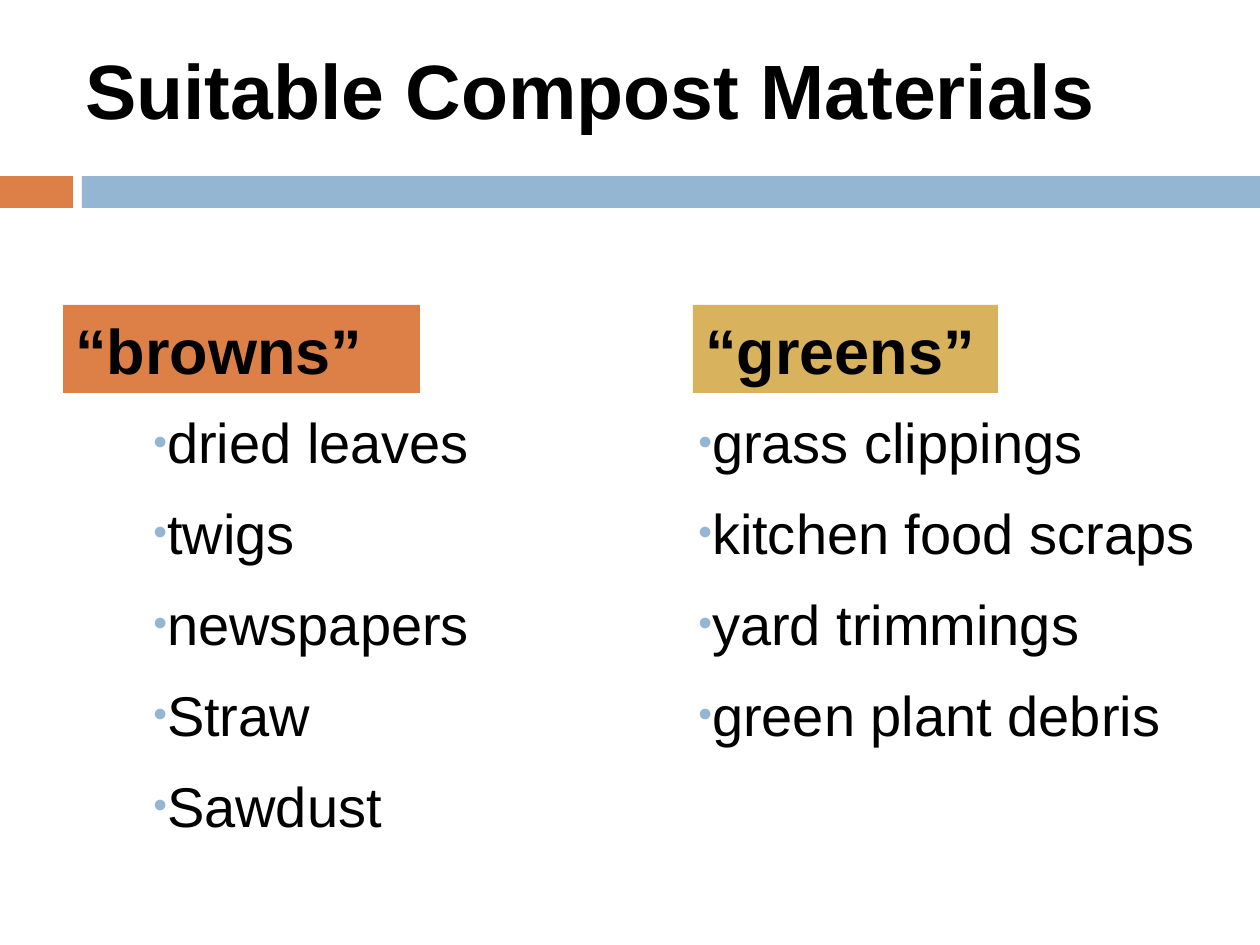
from dataclasses import dataclass

from lxml import etree
from pptx import Presentation
from pptx.dml.color import RGBColor
from pptx.enum.shapes import MSO_SHAPE
from pptx.enum.text import MSO_ANCHOR, PP_ALIGN
from pptx.oxml.ns import qn
from pptx.util import Emu, Pt

RECT = MSO_SHAPE.RECTANGLE
MIDDLE, TOP = MSO_ANCHOR.MIDDLE, MSO_ANCHOR.TOP
LEFT = PP_ALIGN.LEFT

PX = 914400 // 126  # EMU in one px
ORANGE, BLUE, GOLD, BLACK = "DD8047", "94B6D2", "D8B25C", "000000"
LIST_INDENT = 25


@dataclass
class Box:
    x: int
    y: int
    w: int
    h: int

    def emu(self) -> list[Emu]:
        return [Emu(v * PX) for v in (self.x, self.y, self.w, self.h)]


@dataclass
class Column:
    heading: str
    color: str
    heading_box: Box
    items: list[str]
    list_box: Box


COLUMNS = [
    Column("“browns”", ORANGE, Box(63, 305, 357, 88),
           ["dried leaves", "twigs", "newspapers", "Straw", "Sawdust"],
           Box(116, 399, 388, 546)),
    Column("“greens”", GOLD, Box(693, 305, 305, 88),
           ["grass clippings", "kitchen food scraps", "yard trimmings",
            "green plant debris"],
           Box(661, 399, 567, 546)),
]


def rgb(color: str) -> RGBColor:
    return RGBColor.from_string(color)


def add_rect(s, box: Box, color: str):
    sp = s.shapes.add_shape(RECT, *box.emu())
    sp.shadow.inherit = False
    sp.fill.solid()
    sp.fill.fore_color.rgb = rgb(color)
    sp.line.fill.background()
    return sp


def add_bullet(p, color: str) -> None:
    pPr = p._p.get_or_add_pPr()
    pPr.set("marL", str(LIST_INDENT * PX))
    pPr.set("indent", "0")
    bu_color = etree.SubElement(pPr, qn("a:buClr"))
    etree.SubElement(bu_color, qn("a:srgbClr"), val=color)
    etree.SubElement(pPr, qn("a:buSzPct"), val="70000")
    etree.SubElement(pPr, qn("a:buFont"), typeface="Arial")
    etree.SubElement(pPr, qn("a:buChar"), char="•")


def write(sp, lines: list[str], size: int, bold: bool = False,
          anchor=MIDDLE, before: int = 0, spacing: float = 1.0,
          bullet: str = "") -> None:
    tf = sp.text_frame
    tf.word_wrap = True
    tf.vertical_anchor = anchor
    for i, line in enumerate(lines):
        p = tf.add_paragraph() if i else tf.paragraphs[0]
        p.alignment = LEFT
        p.space_before = Pt(before)
        p.line_spacing = spacing
        if bullet:
            add_bullet(p, bullet)
        r = p.add_run()
        r.text = line
        r.font.name = "Arial"
        r.font.size = Pt(size)
        r.font.bold = bold
        r.font.color.rgb = rgb(BLACK)


def add_column(s, col: Column) -> None:
    items = s.shapes.add_textbox(*col.list_box.emu())
    write(items, col.items, 32, anchor=TOP, before=12, spacing=1.04,
          bullet=BLUE)
    heading = add_rect(s, col.heading_box, col.color)
    write(heading, [col.heading], 36, bold=True, before=7)


def main() -> None:
    prs = Presentation()
    prs.slide_width, prs.slide_height = Emu(1260 * PX), Emu(945 * PX)
    s = prs.slides.add_slide(prs.slide_layouts[6])

    # Band under the title
    add_rect(s, Box(0, 176, 73, 32), ORANGE)
    add_rect(s, Box(82, 176, 1178, 32), BLUE)

    # Lists with their headings
    for col in COLUMNS:
        add_column(s, col)

    # Title
    title = s.shapes.add_textbox(*Box(73, 21, 1124, 136).emu())
    write(title, ["Suitable Compost Materials"], 44, bold=True)

    prs.save("out.pptx")


if __name__ == "__main__":
    main()
